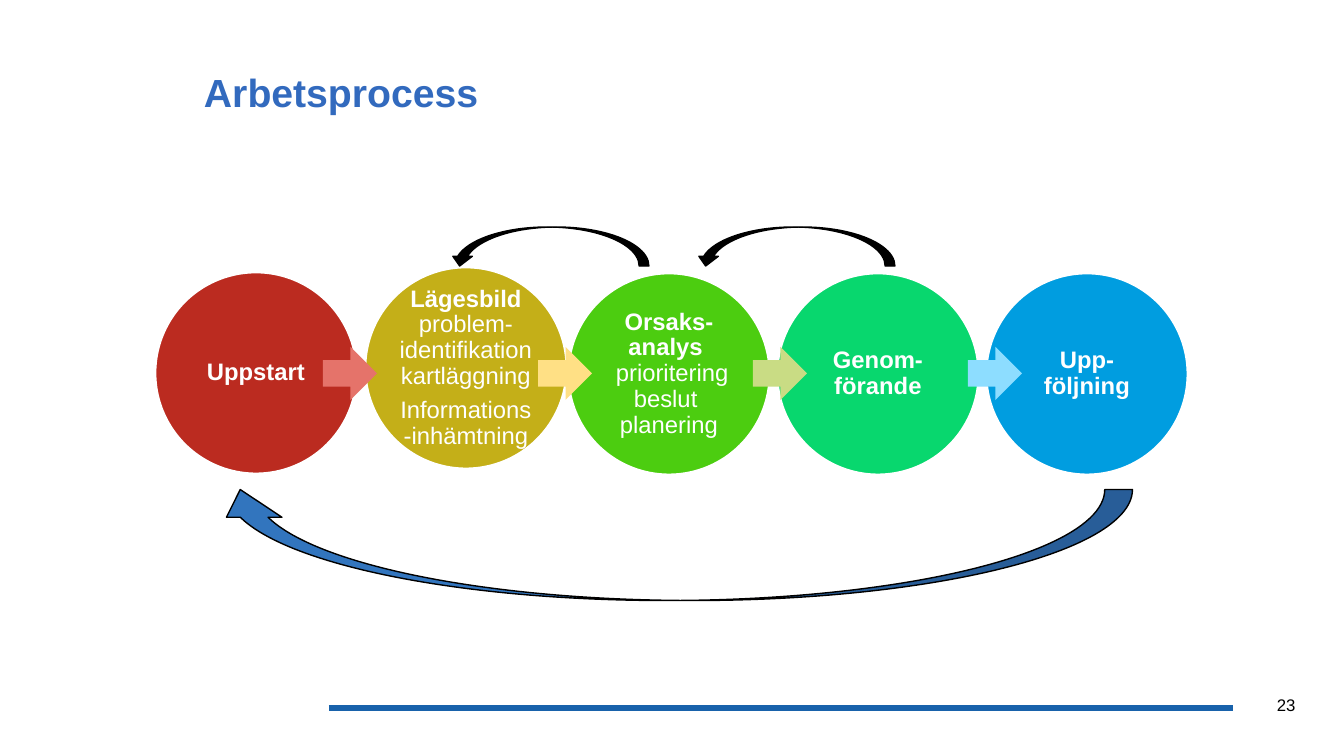
from lxml import etree
from pptx import Presentation, util as u
from pptx.dml.color import RGBColor
from pptx.enum import shapes, text
from pptx.oxml.ns import qn

PX = 914400 / 100.8
COLORS = {
    "title": "326ABE", "rule": "1862AB", "white": "FFFFFF", "black": "000000",
    "return": "3275BE",
}
SHAPE = shapes.MSO_SHAPE


def add_preset(kind, box, fill, line=None, line_width=1):
    """Add a flat preset shape; box is left, top, width, height in px."""
    shape = slide.shapes.add_shape(kind, *(round(n * PX) for n in box))
    shape.shadow.inherit = False
    shape.fill.solid()
    shape.fill.fore_color.rgb = RGBColor.from_string(fill)
    if line:
        shape.line.color.rgb = RGBColor.from_string(line)
        shape.line.width = u.Pt(line_width)
    else:
        shape.line.fill.background()
    return shape


def add_run(paragraph, words, size, color, bold=False):
    run = paragraph.add_run()
    run.text = words
    run.font.name = "Arial"
    run.font.size = u.Pt(size)
    run.font.bold = bold
    run.font.color.rgb = RGBColor.from_string(color)


presentation = Presentation()
presentation.slide_width = round(1344 * PX)
presentation.slide_height = round(756 * PX)
slide = presentation.slides.add_slide(presentation.slide_layouts[6])

# Title, page number and footer rule
labels = [
    ("Arbetsprocess", (196, 29, 918, 126), 8, 28, "title", True, text.MSO_ANCHOR.MIDDLE),
    ("23", (1267, 690, 55, 30), 10, 12, "black", False, text.MSO_ANCHOR.TOP),
]
for words, box, inset, size, color, bold, anchor in labels:
    frame = slide.shapes.add_textbox(*(round(n * PX) for n in box)).text_frame
    frame.word_wrap = True
    frame.vertical_anchor = anchor
    frame.margin_left = frame.margin_right = round(inset * PX)
    frame.margin_top = frame.margin_bottom = round(5 * PX)
    add_run(frame.paragraphs[0], words, size, COLORS[color], bold)

rule = slide.shapes.add_connector(
    shapes.MSO_CONNECTOR.STRAIGHT, *(round(n * PX) for n in (329, 708, 1233, 708)))
rule.line.color.rgb = RGBColor.from_string(COLORS["rule"])
rule.line.width = u.Pt(4.5)
etree.SubElement(rule._element.spPr, qn("a:effectLst"))

# Process steps: left, top, fill, paragraphs of (line, bold)
steps = [
    (155, 272, "BB2B20", [[("Uppstart", True)]]),
    (365, 267, "C4AF18", [
        [("Lägesbild", True), ("problem-identifikation", False), ("kartläggning", False)],
        [("Informations-inhämtning", False)],
    ]),
    (568, 273, "4CCD10", [
        [("Orsaks-analys ", True), (" prioritering", False), ("beslut ", False),
         ("planering", False)],
    ]),
    (777, 273, "08D76E", [[("Genom-förande", True)]]),
    (986, 273, "009DE0", [[("Upp-följning", True)]]),
]
for left, top, fill, paragraphs in steps:
    circle = add_preset(SHAPE.OVAL, (left, top, 202, 202), fill, COLORS["white"], 2)
    frame = circle.text_frame
    frame.word_wrap = True
    frame.vertical_anchor = text.MSO_ANCHOR.MIDDLE
    frame.margin_left = frame.margin_right = round(2 * PX)
    frame.margin_top = frame.margin_bottom = round(2 * PX)
    for number, lines in enumerate(paragraphs):
        paragraph = frame.add_paragraph() if number else frame.paragraphs[0]
        paragraph.alignment = text.PP_ALIGN.CENTER
        paragraph.line_spacing = 0.9
        paragraph.space_after = u.Pt(6)
        for index, (words, bold) in enumerate(lines):
            if index:
                paragraph.add_line_break()
            add_run(paragraph, words, 17, COLORS["white"], bold)

# Arrows between neighbouring steps
for index, fill in enumerate(["E5736A", "FFE085", "C9DC84", "8DDDFF"]):
    add_preset(SHAPE.RIGHT_ARROW, (323 + 215 * index, 347, 54, 53), fill)

# Feedback arrows: the whole process below, single steps above
restart = add_preset(
    SHAPE.CURVED_LEFT_ARROW, (617, 85, 111, 920), COLORS["return"], COLORS["black"])
restart.rotation = 90
for left in (450, 696):
    step_back = add_preset(
        SHAPE.CURVED_DOWN_ARROW, (left, 227, 199, 39), COLORS["black"], COLORS["black"])
    step_back._element.spPr.find(qn("a:xfrm")).set("flipH", "1")

presentation.save("out.pptx")
